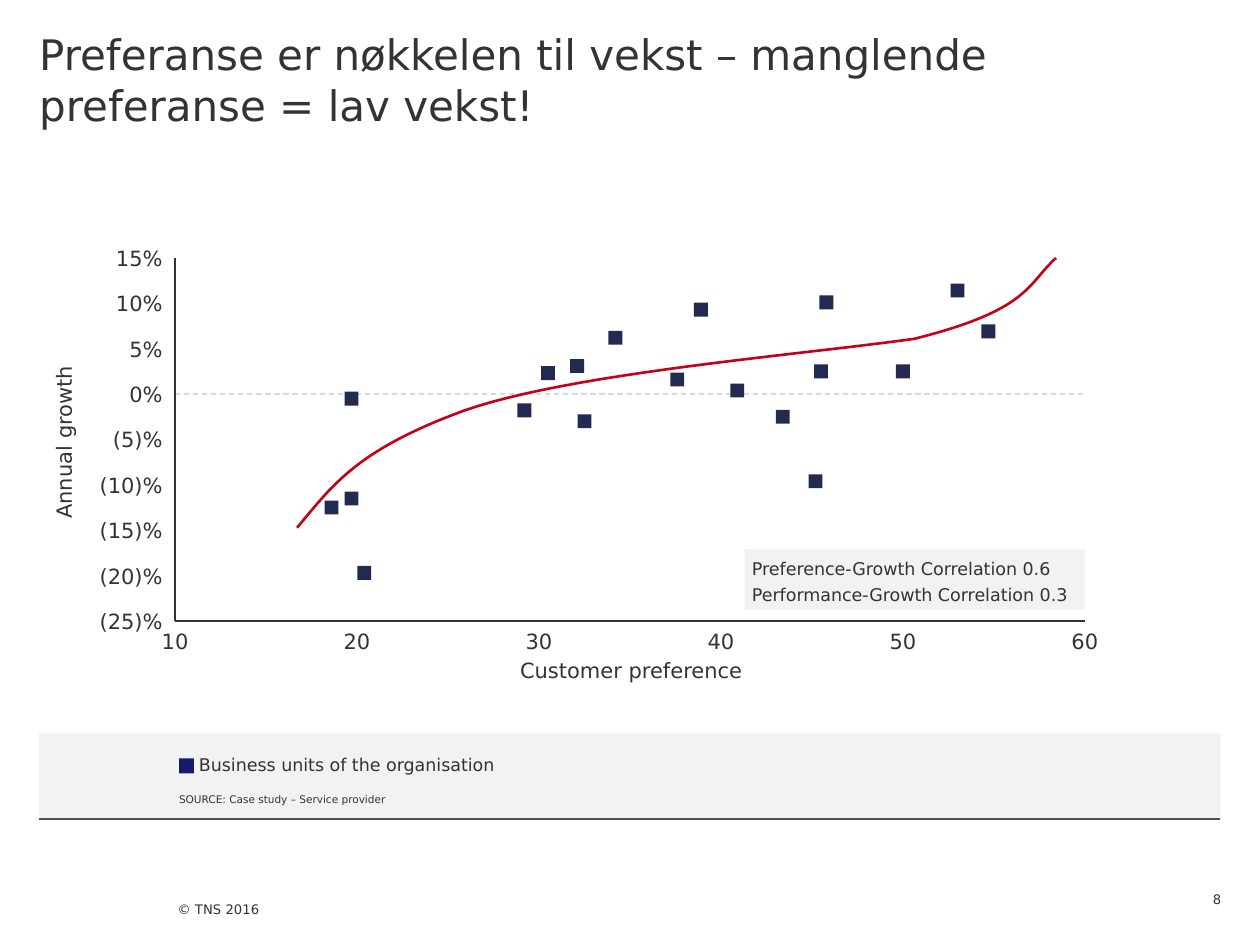
from lxml import etree
from pptx import Presentation
from pptx.dml.color import RGBColor
from pptx.enum import dml, shapes, text
from pptx.oxml.ns import qn
from pptx.util import Cm, Pt

FONT, INK, PANEL, NAVY = "DejaVu Sans", "333333", "F2F2F2", "232A52"
LEFT, RIGHT, TOP, BASE = 3.53, 21.87, 5.2, 12.52
MARK = 0.28
MID, END = text.PP_ALIGN.CENTER, text.PP_ALIGN.RIGHT
HIGH, LOW = text.MSO_ANCHOR.TOP, text.MSO_ANCHOR.BOTTOM

# (customer preference, annual growth in per cent)
UNITS = [
    (38.9, 9.3), (19.7, -0.5), (30.5, 2.3), (37.6, 1.6), (34.2, 6.2),
    (53.0, 11.4), (45.5, 2.5), (50.0, 2.5), (45.2, -9.6), (29.2, -1.8),
    (54.7, 6.9), (32.1, 3.1), (32.5, -3.0), (45.8, 10.1), (43.4, -2.5),
    (40.9, 0.4), (20.4, -19.7), (19.7, -11.5), (18.6, -12.5),
]
# Bezier knots and handles of the trend, in cm
TREND = [
    (5.99, 10.64), (6.73, 9.75), (7.21, 9.07), (9.35, 8.28), (11.51, 7.52),
    (16.1, 7.16), (18.44, 6.83), (20.75, 6.25), (20.7, 5.74), (21.29, 5.2),
]


def color(code):
    return RGBColor.from_string(code)


def across(pref):
    return LEFT + (pref - 10) * (RIGHT - LEFT) / 50


def down(growth):
    return BASE - (growth + 25) * (BASE - TOP) / 40


def style(frame, words, size, align=None, anchor=text.MSO_ANCHOR.MIDDLE,
          pads=(0, 0, 0, 0), wrap=True, gap=None):
    """Fill a text frame; pads are left, top, right, bottom in cm."""
    frame.text = words
    frame.word_wrap = wrap
    frame.vertical_anchor = anchor
    frame.margin_left, frame.margin_top, frame.margin_right, frame.margin_bottom = map(Cm, pads)
    for para in frame.paragraphs:
        para.alignment = align or text.PP_ALIGN.LEFT
        para.line_spacing = gap
        para.font.name, para.font.size = FONT, Pt(size)
        para.font.color.rgb = color(INK)


def label(slide, box, words, size, **look):
    item = slide.shapes.add_textbox(*map(Cm, box))
    style(item.text_frame, words, size, **look)
    return item


def block(slide, box, fill):
    item = slide.shapes.add_shape(shapes.MSO_SHAPE.RECTANGLE, *map(Cm, box))
    item.shadow.inherit = False
    item.fill.solid()
    item.fill.fore_color.rgb = color(fill)
    item.line.fill.background()
    return item


def rule(slide, ends, tint, dash=False):
    item = slide.shapes.add_connector(shapes.MSO_CONNECTOR.STRAIGHT, *map(Cm, ends))
    item.line.color.rgb = color(tint)
    item.line.width = Pt(0.75)
    if dash:
        item.line.dash_style = dml.MSO_LINE.DASH
    etree.SubElement(item._element.spPr, qn("a:effectLst"))


def bezier(knots, steps=24):
    """Sample a chain of cubic segments, first knot included."""
    spots = [knots[0]]
    for i in range(0, len(knots) - 1, 3):
        for n in range(1, steps + 1):
            t = n / steps
            parts = ((1 - t) ** 3, 3 * t * (1 - t) ** 2, 3 * t * t * (1 - t), t ** 3)
            spots.append(tuple(sum(w * k[d] for w, k in zip(parts, knots[i:i + 4]))
                               for d in (0, 1)))
    return spots


def curve(slide, knots):
    first, *rest = [(Cm(x), Cm(y)) for x, y in bezier(knots)]
    path = slide.shapes.build_freeform(*first)
    path.add_line_segments(rest, close=False)
    item = path.convert_to_shape()
    item.shadow.inherit = False
    item.fill.background()
    item.line.color.rgb = color("C50017")
    item.line.width = Pt(1.5)


def axes(slide):
    name = label(slide, (-0.28, 8.66, 3.12, 0.51), "Annual growth", 12,
                 align=MID, wrap=False)
    name.rotation = 270
    for tick in range(-25, 20, 5):
        words = f"({-tick})%" if tick < 0 else f"{tick}%"
        label(slide, (1.88, down(tick) - 0.25, 1.55, 0.5), words, 12,
              align=END, pads=(0, 0, 0.15, 0), wrap=False)
    label(slide, (8.61, 13.26, 8.23, 0.5), "Customer preference", 12,
          align=MID, anchor=HIGH)
    for tick in range(10, 70, 10):
        label(slide, (across(tick) - 0.27, BASE, 0.54, 0.66), str(tick), 12,
              align=MID, anchor=HIGH, pads=(0, 0.15, 0, 0), wrap=False)
    rule(slide, (LEFT, BASE, RIGHT, BASE), INK)
    rule(slide, (LEFT, down(0), RIGHT, down(0)), "D9D9D9", dash=True)
    rule(slide, (LEFT, BASE, LEFT, TOP), INK)


def plot(slide):
    axes(slide)
    curve(slide, TREND)
    for pref, growth in UNITS:
        block(slide, (across(pref) - MARK / 2, down(growth) - MARK / 2, MARK, MARK), NAVY)
    note = block(slide, (15.01, 11.07, 6.86, 1.22), PANEL)
    style(note.text_frame, "Preference-Growth Correlation 0.6\n"
          "Performance-Growth Correlation 0.3", 10, pads=(0.15,) * 4, gap=1.2)


def legend(slide):
    block(slide, (0.79, 14.78, 23.82, 1.75), PANEL)
    rule(slide, (0.79, 16.51, 24.59, 16.51), "525252")
    block(slide, (3.61, 15.29, 0.3, 0.3), "131C6B")
    label(slide, (4.01, 15.2, 7.09, 0.43), "Business units of the organisation", 10)
    label(slide, (3.61, 15.98, 4.45, 0.25), "SOURCE: Case study – Service provider",
          6, wrap=False)


def main():
    deck = Presentation()
    deck.slide_width, deck.slide_height = Cm(25.4), Cm(19.05)
    slide = deck.slides.add_slide(deck.slide_layouts[5])
    title = slide.shapes.title
    title.left, title.top, title.width, title.height = map(Cm, (0.79, 0, 23.8, 2.87))
    style(title.text_frame,
          "Preferanse er nøkkelen til vekst – manglende preferanse = lav vekst!",
          24, anchor=HIGH, pads=(0, 0.58, 0, 0))
    plot(slide)
    legend(slide)
    label(slide, (3.58, 17.58, 7.06, 1.47), "© TNS 2016", 7.5, anchor=LOW,
          pads=(0, 0, 0, 0.79))
    label(slide, (23.22, 17.58, 1.4, 0.7), "8", 7.5, align=END, anchor=LOW)
    deck.save("out.pptx")


if __name__ == "__main__":
    main()
